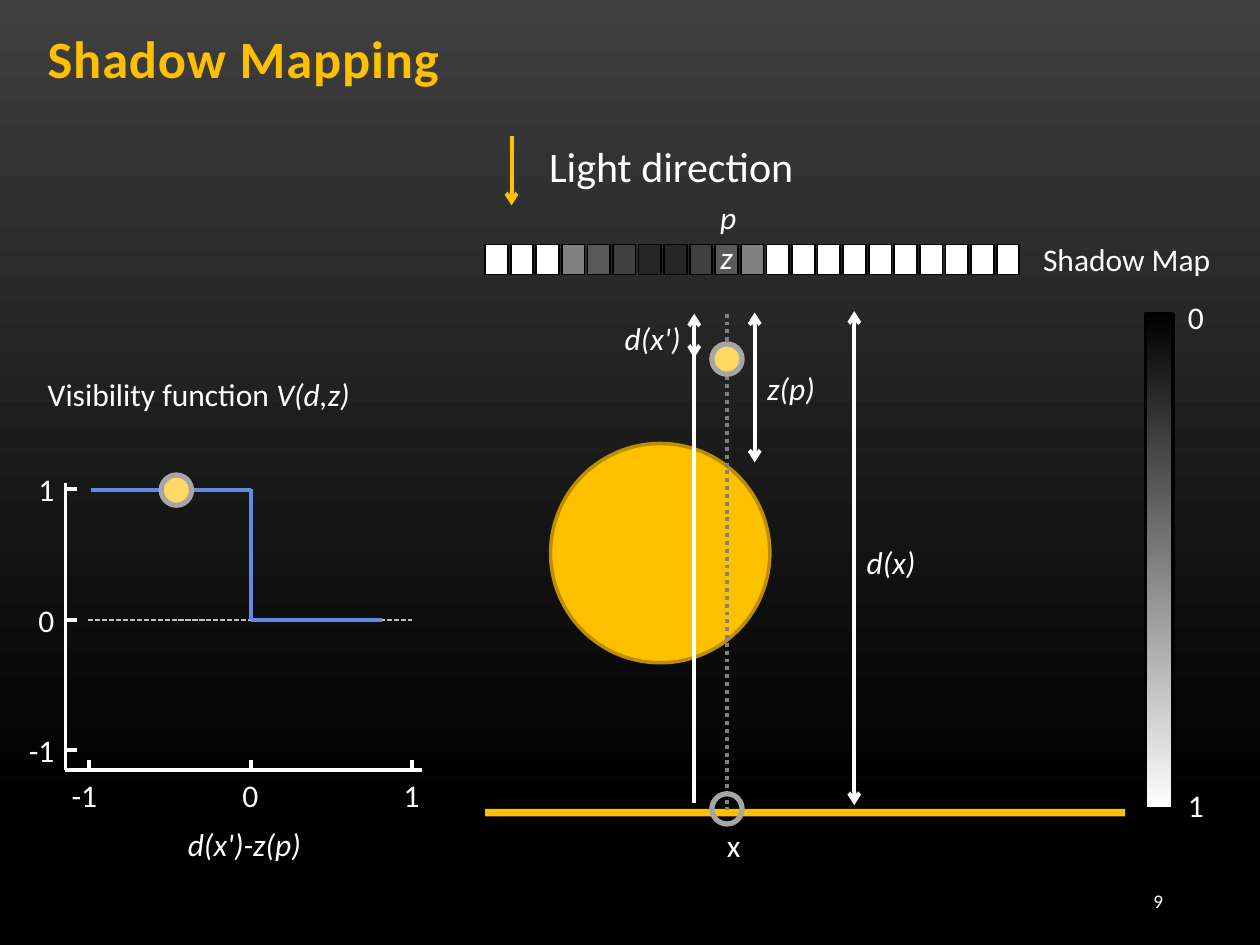
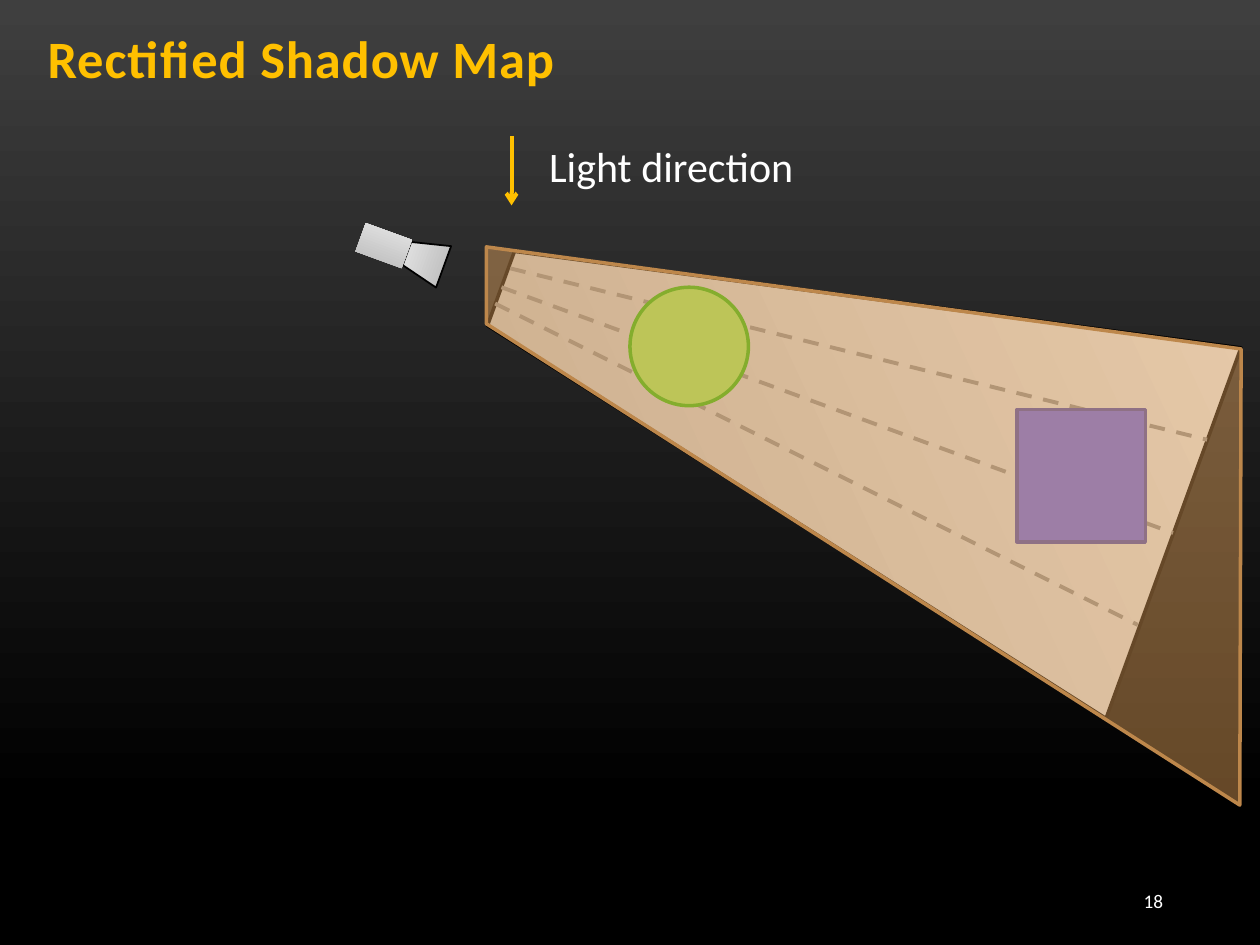
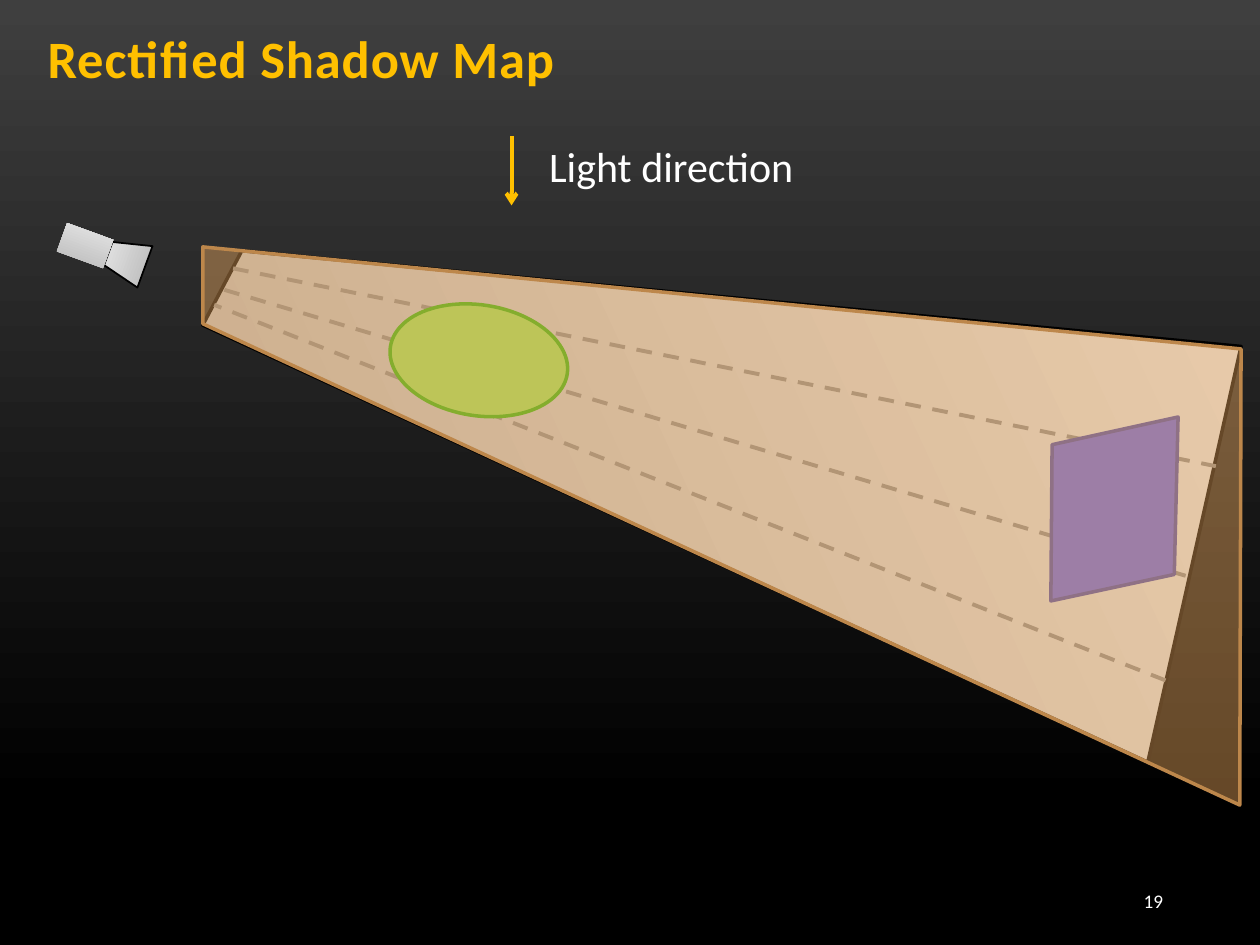
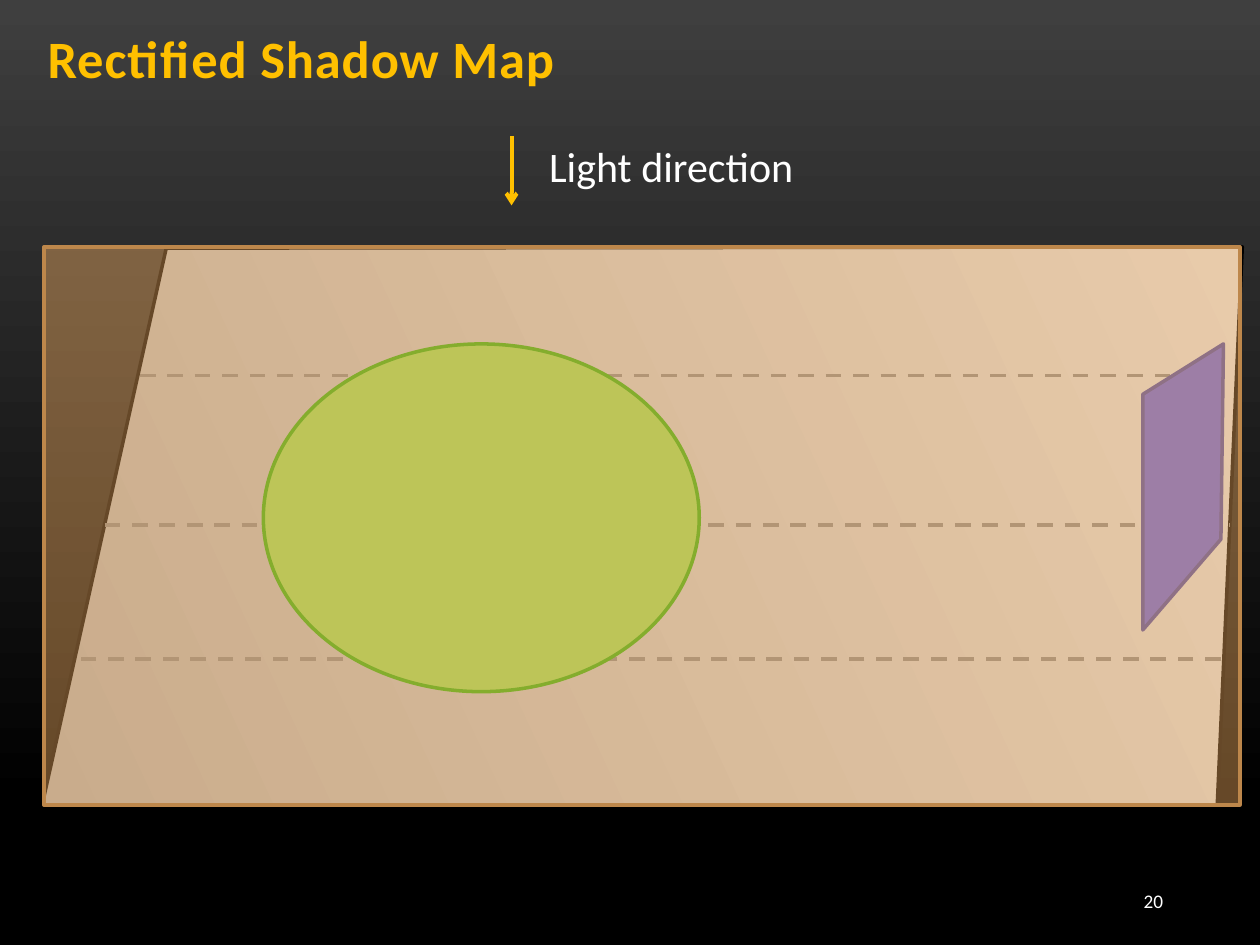
from lxml.etree import SubElement
from pptx import Presentation
from pptx.dml.color import RGBColor
from pptx.enum.dml import MSO_LINE
from pptx.enum.shapes import MSO_CONNECTOR, MSO_SHAPE
from pptx.enum.text import MSO_ANCHOR, MSO_AUTO_SIZE, PP_ALIGN
from pptx.oxml.ns import qn
from pptx.util import Inches, Pt

COLORS = {
    "background": "3F3F3F",
    "black": "000000",
    "white": "FFFFFF",
    "gold": "FFC000",
    "gold edge": "BD8E00",
    "marker": "FFD966",
    "ring": "A6A6A6",
    "gray": "808080",
    "zero line": "BFBFBF",
    "curve": "648AE2",
    "depth 1": "595959",
    "depth 2": "404040",
    "depth 3": "262626",
    "camera dark": "B8B8B8",
    "camera light": "E9E9E9",
    "view dark": "A6A6A6",
    "view light": "D9D9D9",
    "green": "92D050",
    "green edge": "32A709",
    "purple": "5D5AD2",
    "purple edge": "45439B",
    "light volume": "FFB665",
    "volume edge": "BD874B",
}
FONT = "Calibri"
LEFT, CENTER, RIGHT = PP_ALIGN.LEFT, PP_ALIGN.CENTER, PP_ALIGN.RIGHT


def add_line(slide, start, end, color="white", width=2.25, dash=None, arrows=()):
    """Draw a straight line; arrows names the ends ("head", "tail") to point."""
    connector = slide.shapes.add_connector(
        MSO_CONNECTOR.STRAIGHT, *(Inches(value) for value in (*start, *end)))
    connector.line.color.rgb = RGBColor.from_string(COLORS[color])
    connector.line.width = Pt(width)
    if dash:
        connector.line.dash_style = dash
    outline = connector._element.spPr.find(qn("a:ln"))
    for arrow in arrows:
        SubElement(outline, qn(f"a:{arrow}End"), type="arrow")
    SubElement(connector._element.spPr, qn("a:effectLst"))


def add_polygon(slide, points):
    corners = [(Inches(x), Inches(y)) for x, y in points]
    builder = slide.shapes.build_freeform(*corners[0])
    builder.add_line_segments(corners[1:], close=True)
    return builder.convert_to_shape()


presentation = Presentation()
presentation.slide_width = Inches(10)
presentation.slide_height = Inches(7.5)

background = presentation.slide_master.background.fill
background.gradient()
background.gradient_angle = 270
for stop, color, position in zip(background.gradient_stops, ("background", "black"), (0, 0.85)):
    stop.color.rgb = RGBColor.from_string(COLORS[color])
    stop.position = position

# Shapes wait here as (shape, fill, line, line width); a gradient fill is
# (first colour, last colour, angle).
styled = []
# Labels wait here as (slide, left, top, width, text, size, italic, alignment).
labels = []

# Shared frame: title, number, light direction
slides = []
for heading, number in (("Shadow Mapping", 9), ("Rectified Shadow Map", 18),
                        ("Rectified Shadow Map", 19), ("Rectified Shadow Map", 20)):
    slide = presentation.slides.add_slide(presentation.slide_layouts[6])
    slides.append(slide)

    title = slide.shapes.add_textbox(Inches(0.28), 0, Inches(9.53), Inches(0.76))
    title.text_frame.word_wrap = True
    title.text_frame.vertical_anchor = MSO_ANCHOR.BOTTOM
    paragraph = title.text_frame.paragraphs[0]
    paragraph.text = heading
    paragraph.font.name = FONT
    paragraph.font.size = Pt(30)
    paragraph.font.bold = True
    paragraph.font.color.rgb = RGBColor.from_string(COLORS["gold"])
    paragraph.runs[0]._r.get_or_add_rPr().set("spc", "50")

    footer = slide.shapes.add_textbox(Inches(8.25), Inches(6.95), Inches(1.08), Inches(0.4))
    footer.text_frame.word_wrap = True
    footer.text_frame.vertical_anchor = MSO_ANCHOR.MIDDLE
    paragraph = footer.text_frame.paragraphs[0]
    paragraph.text = str(number)
    paragraph.alignment = RIGHT
    paragraph.font.name = FONT
    paragraph.font.size = Pt(11)
    paragraph.font.color.rgb = RGBColor.from_string(COLORS["white"])

    add_line(slide, (4.06, 1.08), (4.06, 1.63), "gold", arrows=["tail"])
    labels.append((slide, 4.26, 1.07, 2.16, "Light direction", 24, False, LEFT))

mapping, square_view, skewed_view, rectified_view = slides

# Shadow mapping: scene
for preset, left, top, width, height, fill, line, line_width in (
    (MSO_SHAPE.OVAL, 4.37, 3.52, 1.74, 1.74, "gold", "gold edge", 2),
    (MSO_SHAPE.RECTANGLE, 3.85, 6.42, 5.08, 0.06, "gold", None, 0),
    (MSO_SHAPE.RECTANGLE, 9.09, 2.49, 0.22, 3.93, ("black", "white", 270), "black", 2),
):
    shape = mapping.shapes.add_shape(
        preset, Inches(left), Inches(top), Inches(width), Inches(height))
    styled.append((shape, fill, line, line_width))

add_line(mapping, (5.77, 2.49), (5.77, 6.43), "gray", dash=MSO_LINE.ROUND_DOT)

# Shadow mapping: depth cells
cell_colors = (["white"] * 3
               + ["gray", "depth 1", "depth 2", "depth 3", "depth 3", "depth 2", "depth 1", "gray"]
               + ["white"] * 10)
cell_pitch = (7.91 - 3.85) / (len(cell_colors) - 1)
for index, color in enumerate(cell_colors):
    cell = mapping.shapes.add_shape(
        MSO_SHAPE.RECTANGLE, Inches(3.85 + index * cell_pitch), Inches(1.94),
        Inches(0.18), Inches(0.24))
    styled.append((cell, color, "black", 1))

# Shadow mapping: visibility plot
add_line(mapping, (0.52, 3.83), (0.52, 6.11))
add_line(mapping, (3.35, 6.11), (0.52, 6.11))
for text, y, width in (("1", 3.88, 0.33), ("0", 4.92, 0.33), ("-1", 5.95, 0.41)):
    add_line(mapping, (0.61, y), (0.53, y))
    labels.append((mapping, 0.53 - width, y - 0.2, width, text, 18, False, RIGHT))
for text, x, width in (("-1", 0.71, 0.41), ("0", 1.99, 0.33), ("1", 3.27, 0.33)):
    add_line(mapping, (x, 6.11), (x, 6.03))
    labels.append((mapping, x + 0.16 - width, 6.11, width, text, 18, False, RIGHT))
add_line(mapping, (0.7, 4.92), (3.27, 4.92), "zero line", 1, MSO_LINE.SQUARE_DOT)
for start, end in (((1.99, 3.89), (0.72, 3.89)),
                   ((1.99, 3.88), (1.99, 4.92)),
                   ((3.03, 4.92), (1.99, 4.92))):
    add_line(mapping, start, end, "curve")

# Shadow mapping: distance arrows and sample markers
for x, top, bottom in ((5.51, 2.49, 2.84), (5.99, 2.48, 3.67), (6.78, 2.47, 6.39)):
    add_line(mapping, (x, top), (x, bottom), arrows=["head", "tail"])
add_line(mapping, (5.51, 2.76), (5.51, 6.37))
for left, top, fill in ((5.65, 6.3, None), (5.65, 2.73, "marker"), (1.28, 3.77, "marker")):
    marker = mapping.shapes.add_shape(
        MSO_SHAPE.OVAL, Inches(left), Inches(top), Inches(0.24), Inches(0.24))
    styled.append((marker, fill, "ring", 3))

for left, top, width, text, italic, alignment in (
    (8.18, 1.86, 1.55, "Shadow Map", False, LEFT),
    (5.67, 6.51, 0.31, "x", False, LEFT),
    (5.99, 2.88, 0.59, "z(p)", True, LEFT),
    (6.78, 4.26, 0.6, "d(x)", True, LEFT),
    (4.86, 2.48, 0.65, "d(x')", True, LEFT),
    (5.61, 1.52, 0.34, "p", True, CENTER),
    (5.62, 1.84, 0.3, "z", True, LEFT),
    (1.38, 6.5, 1.12, "d(x')-z(p)", True, CENTER),
    (9.33, 2.32, 0.33, "0", False, LEFT),
    (9.33, 6.19, 0.33, "1", False, LEFT),
    (0.28, 2.93, 2.65, "Visibility function |V(d,z)", False, LEFT),
):
    labels.append((mapping, left, top, width, text, 18, italic, alignment))

# Rectified views: cameras
for slide, left in ((square_view, 2.85), (skewed_view, 0.48)):
    for preset, x, y, width, height, rotation, line in (
        (MSO_SHAPE.TRAPEZOID, left + 0.35, 1.91, 0.35, 0.31, 290, "black"),
        (MSO_SHAPE.RECTANGLE, left, 1.83, 0.39, 0.24, 20, None),
    ):
        part = slide.shapes.add_shape(
            preset, Inches(x), Inches(y), Inches(width), Inches(height))
        part.rotation = rotation
        styled.append((part, ("camera dark", "camera light", 90), line, 1))

# Rectified views: view volumes
view = square_view.shapes.add_shape(
    MSO_SHAPE.TRAPEZOID, Inches(5.08), Inches(0.42), Inches(3.13), Inches(5.68))
view.rotation = 290
view.adjustments[0] = 0.4
styled.append((view, ("view dark", "view light", 315), "black", 2))
for slide, points in (
    (skewed_view, [(9.11, 6.05), (1.61, 2.58), (1.92, 1.99), (9.85, 2.75)]),
    (rectified_view, [(9.66, 6.42), (0.33, 6.41), (1.32, 1.97), (9.86, 1.96)]),
):
    styled.append((add_polygon(slide, points), ("view dark", "view light", 25), "black", 2))

# Rectified views: rays
for slide, rays in (
    (square_view, [((3.98, 2.28), (9.31, 4.23)), ((4.05, 2.13), (9.58, 3.49)),
                   ((3.93, 2.41), (9.03, 4.96))]),
    (skewed_view, [((9.25, 5.4), (1.7, 2.42)), ((1.78, 2.3), (9.41, 4.57)),
                   ((1.85, 2.13), (9.65, 3.7))]),
    (rectified_view, [((9.69, 5.23), (0.59, 5.23)), ((0.83, 4.17), (9.76, 4.17)),
                      ((1.11, 2.98), (9.79, 2.98))]),
):
    for start, end in rays:
        add_line(slide, start, end, "gray", dash=MSO_LINE.DASH)

# Rectified views: ball and box
for slide, left, top, width, height, rotation in (
    (square_view, 5, 2.28, 0.94, 0.94, 0),
    (skewed_view, 3.09, 2.42, 1.42, 0.88, 8.8),
    (rectified_view, 2.09, 2.73, 3.46, 2.76, 0),
):
    ball = slide.shapes.add_shape(
        MSO_SHAPE.OVAL, Inches(left), Inches(top), Inches(width), Inches(height))
    ball.rotation = rotation
    styled.append((ball, "green", "green edge", 2))

box = square_view.shapes.add_shape(
    MSO_SHAPE.RECTANGLE, Inches(8.07), Inches(3.25), Inches(1.02), Inches(1.05))
styled.append((box, "purple", "purple edge", 2))
for slide, points in (
    (skewed_view, [(8.35, 3.53), (9.35, 3.31), (9.32, 4.56), (8.34, 4.77)]),
    (rectified_view, [(9.07, 3.13), (9.71, 2.73), (9.69, 4.28), (9.07, 5)]),
):
    styled.append((add_polygon(slide, points), "purple", "purple edge", 2))

# Rectified views: light volumes
for slide, left in ((square_view, 3.86), (skewed_view, 1.61)):
    volume = add_polygon(slide, [(left, 1.96), (9.85, 2.77), (9.84, 6.39), (left, 2.57)])
    styled.append((volume, "light volume", "volume edge", 2))
volume = rectified_view.shapes.add_shape(
    MSO_SHAPE.RECTANGLE, Inches(0.35), Inches(1.96), Inches(9.49), Inches(4.43))
styled.append((volume, "light volume", "volume edge", 2))

for shape, fill, line, line_width in styled:
    shape.shadow.inherit = False
    if fill is None:
        shape.fill.background()
    elif isinstance(fill, tuple):
        *stop_colors, angle = fill
        shape.fill.gradient()
        shape.fill.gradient_angle = angle
        for stop, color in zip(shape.fill.gradient_stops, stop_colors):
            stop.color.rgb = RGBColor.from_string(COLORS[color])
    else:
        shape.fill.solid()
        shape.fill.fore_color.rgb = RGBColor.from_string(COLORS[fill])
    if fill == "light volume":
        solid_fill = shape._element.spPr.find(qn("a:solidFill"))
        SubElement(solid_fill[0], qn("a:alpha"), val="40000")
    if line:
        shape.line.color.rgb = RGBColor.from_string(COLORS[line])
        shape.line.width = Pt(line_width)
    else:
        shape.line.fill.background()

for slide, left, top, width, text, size, italic, alignment in labels:
    label = slide.shapes.add_textbox(
        Inches(left), Inches(top), Inches(width), Inches(0.5 if size == 24 else 0.4))
    label.text_frame.word_wrap = False
    label.text_frame.auto_size = MSO_AUTO_SIZE.SHAPE_TO_FIT_TEXT
    paragraph = label.text_frame.paragraphs[0]
    paragraph.alignment = alignment
    paragraph.font.name = FONT
    paragraph.font.size = Pt(size)
    paragraph.font.italic = italic
    paragraph.font.color.rgb = RGBColor.from_string(COLORS["white"])
    # The part after a bar is a formula.
    plain, _, formula = text.partition("|")
    paragraph.add_run().text = plain
    if formula:
        run = paragraph.add_run()
        run.text = formula
        run.font.italic = True

presentation.save("out.pptx")
